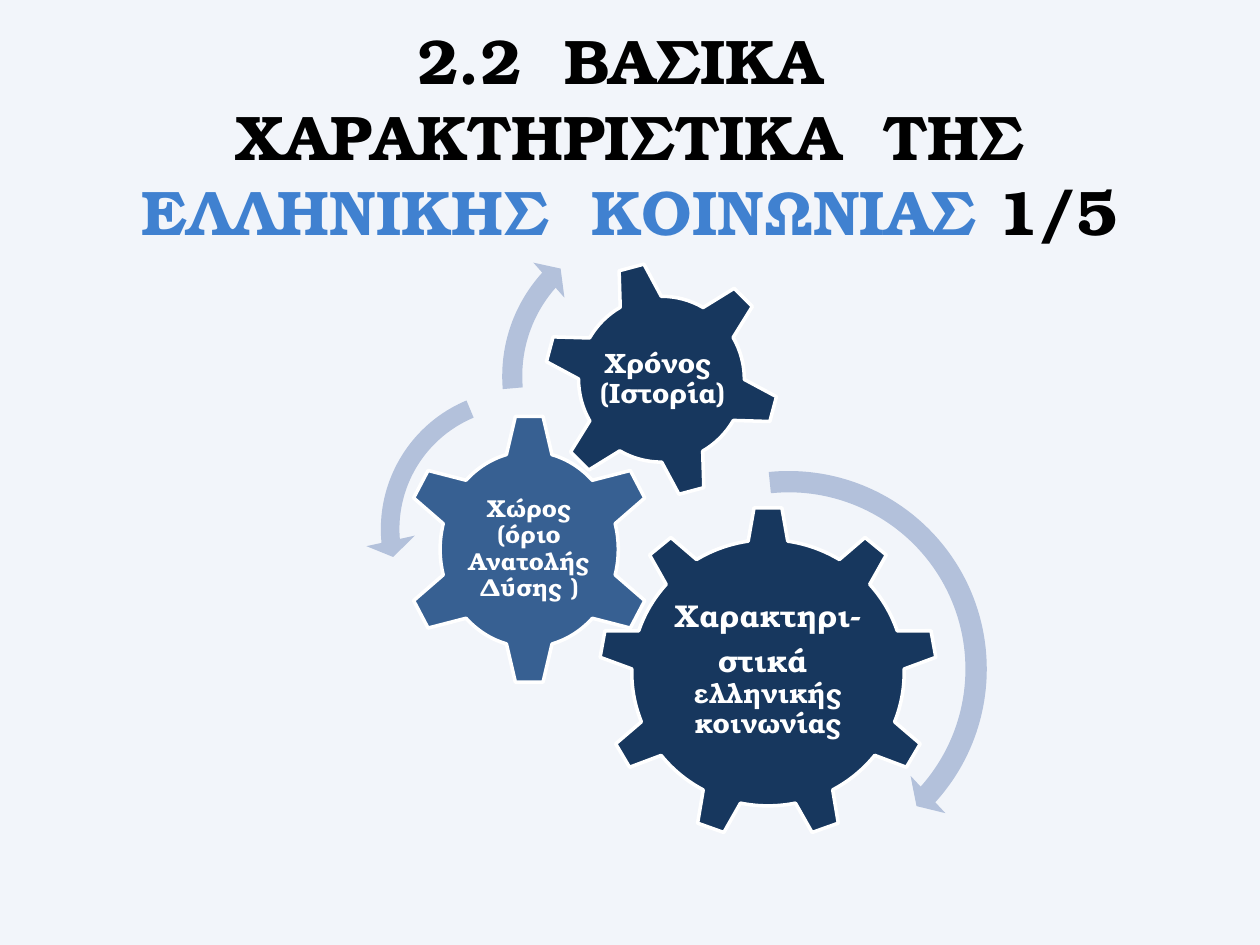
from pptx import Presentation
from pptx.dml.color import RGBColor
from pptx.enum.shapes import MSO_SHAPE
from pptx.enum.text import MSO_ANCHOR, PP_ALIGN
from pptx.util import Inches, Pt

FONT = "TeX Gyre Bonum"
PALE = RGBColor(0xF2, 0xF5, 0xFA)
BLACK = RGBColor(0, 0, 0)
WHITE = RGBColor(0xFF, 0xFF, 0xFF)
SKY = RGBColor(0x40, 0x81, 0xD0)
NAVY = RGBColor(0x17, 0x37, 0x5E)
STEEL = RGBColor(0x37, 0x60, 0x92)
MIST = RGBColor(0xB3, 0xC1, 0xDB)


def add_text(slide, box, paras, size, color=WHITE, inset=0.02, lead=None, after=0):
    """Each paragraph is a list of runs: (text, format overrides)."""
    frame = slide.shapes.add_textbox(*map(Inches, box)).text_frame
    frame.word_wrap = True
    frame.vertical_anchor = MSO_ANCHOR.MIDDLE
    frame.margin_left = frame.margin_right = Inches(inset)
    frame.margin_top = frame.margin_bottom = Inches(min(inset, 0.05))
    for i, runs in enumerate(paras):
        para = frame.add_paragraph() if i else frame.paragraphs[0]
        para.alignment = PP_ALIGN.CENTER
        para.space_after = Pt(after)
        if lead:
            para.line_spacing = lead
        for text, style in runs:
            run = para.add_run()
            run.text = text
            run.font.name = FONT
            run.font.bold = True
            run.font.size = Pt(style.get("size", size))
            run.font.color.rgb = style.get("color", color)


def add_form(slide, kind, box, fill):
    form = slide.shapes.add_shape(kind, *map(Inches, box))
    form.shadow.inherit = False
    form.fill.solid()
    form.fill.fore_color.rgb = fill
    form.line.fill.background()
    return form


def add_gear(slide, kind, box, fill, label, paras, size, turn=0, inset=0.02):
    gear = add_form(slide, kind, box, fill)
    gear.line.color.rgb = WHITE
    gear.line.width = Pt(2)
    gear.rotation = turn
    add_text(slide, label, paras, size, inset=inset, lead=0.9, after=0.35 * size)


def add_arc(slide, kind, left, top, side, adjust):
    arc = add_form(slide, kind, (left, top, side, side), MIST)
    for i, value in enumerate(adjust):
        arc.adjustments[i] = value


def main():
    deck = Presentation()
    deck.slide_width, deck.slide_height = Inches(10), Inches(7.5)
    slide = deck.slides.add_slide(deck.slide_layouts[6])
    slide.background.fill.solid()
    slide.background.fill.fore_color.rgb = PALE

    # Title
    add_text(slide, (0.75, 0.36, 8.5, 1.42), [[
        ("2.2  ΒΑΣΙΚΑ  ΧΑΡΑΚΤΗΡΙΣΤΙΚΑ  ΤΗΣ ", {}),
        ("ΕΛΛΗΝΙΚΗΣ  ΚΟΙΝΩΝΙΑΣ ", {"color": SKY}),
        ("1/5", {}),
    ]], 36, color=BLACK, inset=0.1)

    # Gears with their labels
    add_gear(slide, MSO_SHAPE.GEAR_9, (4.75, 4.02, 2.69, 2.64), NAVY,
             (5.29, 4.64, 1.61, 1.36),
             [[("Χαρακτηρι-", {})],
              [("στικά  ", {}), ("ελληνικής κοινωνίας", {"size": 16})]],
             18, inset=0.03)
    add_gear(slide, MSO_SHAPE.GEAR_6, (3.19, 3.28, 2.02, 2.16), STEEL,
             (3.7, 3.81, 1, 1.1),
             [[("Χώρος (όριο Ανατολής Δύσης )", {})]], 14)
    add_gear(slide, MSO_SHAPE.GEAR_6, (4.31, 2.07, 1.88, 1.88), NAVY,
             (4.73, 2.48, 1.06, 1.06),
             [[("Χρόνος  (Ιστορία)", {})]], 16, turn=345)

    # Turning arrows
    add_arc(slide, MSO_SHAPE.CIRCULAR_ARROW, 4.57, 3.62, 3.38,
            (0.05, 2.99, 25.21, 158.52, 0.06))
    add_arc(slide, MSO_SHAPE.LEFT_CIRCULAR_ARROW, 2.9, 2.97, 2.46,
            (0.06, 4.3, 104.89, 148.38, 0.08))
    add_arc(slide, MSO_SHAPE.CIRCULAR_ARROW, 3.88, 1.66, 2.65,
            (0.06, 3.94, 133.14, 105.08, 0.07))

    deck.save("out.pptx")


if __name__ == "__main__":
    main()
